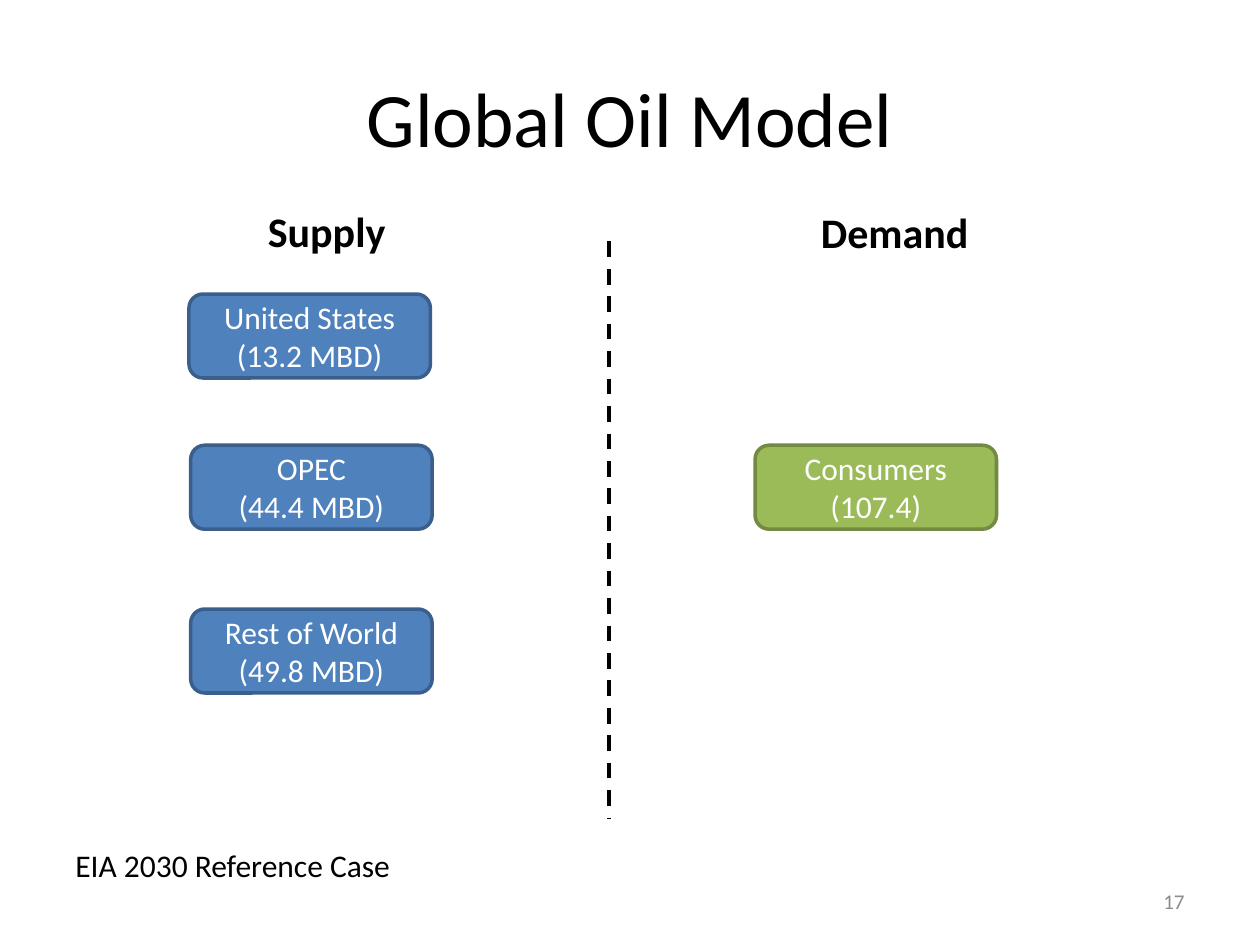
"""Build the Global Oil Model slide: supply boxes, demand box and a divider."""
import pptx
import pptx.util
import pptx.dml.color
import pptx.enum.dml
import pptx.enum.shapes
import pptx.enum.text
import pptx.oxml

Pt = pptx.util.Pt
RGBColor = pptx.dml.color.RGBColor
ALIGN = pptx.enum.text.PP_ALIGN
ANCHOR = pptx.enum.text.MSO_ANCHOR
SHAPE = pptx.enum.shapes.MSO_SHAPE

BLACK = RGBColor(0x00, 0x00, 0x00)
WHITE = RGBColor(0xFF, 0xFF, 0xFF)
GRAY = RGBColor(0x8C, 0x8C, 0x8C)
BLUE = RGBColor(0x4F, 0x81, 0xBD)
DARK_BLUE = RGBColor(0x3A, 0x5F, 0x8C)
GREEN = RGBColor(0x9B, 0xBB, 0x59)
DARK_GREEN = RGBColor(0x73, 0x8A, 0x42)

LABELS = [
    ("Global Oil Model", (36, 21.6, 648, 90), 44, False, BLACK, ALIGN.CENTER, ANCHOR.MIDDLE, True),
    ("Supply", (146, 114, 83, 36), 24, True, BLACK, ALIGN.LEFT, ANCHOR.TOP, False),
    ("Demand", (462, 114.5, 100, 36), 24, True, BLACK, ALIGN.LEFT, ANCHOR.TOP, False),
    ("EIA 2030 Reference Case", (36, 480, 196.5, 29), 18, False, BLACK, ALIGN.LEFT, ANCHOR.TOP, False),
    ("17", (516, 500.5, 168, 28.75), 12, False, GRAY, ALIGN.RIGHT, ANCHOR.MIDDLE, True),
]
SUPPLY = (BLUE, DARK_BLUE)
DEMAND = (GREEN, DARK_GREEN)
BOXES = [
    ("United States\n(13.2 MBD)", 108, 168, SUPPLY),
    ("OPEC\n(44.4 MBD)", 109, 254.4, SUPPLY),
    ("Rest of World\n(49.8 MBD)", 109, 348, SUPPLY),
    ("Consumers\n(107.4)", 431.5, 254.4, DEMAND),
]
BOX_SIZE = (138, 48)
DIVIDER = (348, 138, 348, 468)


def write(tf, text, size, color, align, anchor, bold=False, wrap=True):
    tf.text = text
    tf.word_wrap = wrap
    tf.vertical_anchor = anchor
    for p in tf.paragraphs:
        p.alignment = align
        for r in p.runs:
            r.font.name = "Calibri"
            r.font.size = Pt(size)
            r.font.bold = bold
            r.font.color.rgb = color


def add_label(s, text, place, size, bold, color, align, anchor, wrap):
    tf = s.shapes.add_textbox(*map(Pt, place)).text_frame
    write(tf, text, size, color, align, anchor, bold, wrap)
    if not wrap:
        tf.auto_size = pptx.enum.text.MSO_AUTO_SIZE.SHAPE_TO_FIT_TEXT


def add_box(s, text, left, top, colors):
    sp = s.shapes.add_shape(SHAPE.ROUNDED_RECTANGLE, *map(Pt, (left, top, *BOX_SIZE)))
    fill, line = colors
    sp.shadow.inherit = False
    sp.fill.solid()
    sp.fill.fore_color.rgb = fill
    sp.line.color.rgb = line
    sp.line.width = Pt(2)
    write(sp.text_frame, text, 18, WHITE, ALIGN.CENTER, ANCHOR.MIDDLE)


def add_divider(s):
    line = s.shapes.add_connector(pptx.enum.shapes.MSO_CONNECTOR.STRAIGHT, *map(Pt, DIVIDER))
    line.line.color.rgb = BLACK
    line.line.width = Pt(2.25)
    line.line.dash_style = pptx.enum.dml.MSO_LINE.DASH
    effects = '<a:effectLst xmlns:a="http://schemas.openxmlformats.org/drawingml/2006/main"/>'
    line._element.spPr.append(pptx.oxml.parse_xml(effects))


def main():
    prs = pptx.Presentation()
    prs.slide_width, prs.slide_height = Pt(720), Pt(540)
    s = prs.slides.add_slide(prs.slide_layouts[6])
    add_divider(s)
    for label in LABELS:
        add_label(s, *label)
    for box in BOXES:
        add_box(s, *box)
    prs.save("out.pptx")


if __name__ == "__main__":
    main()
